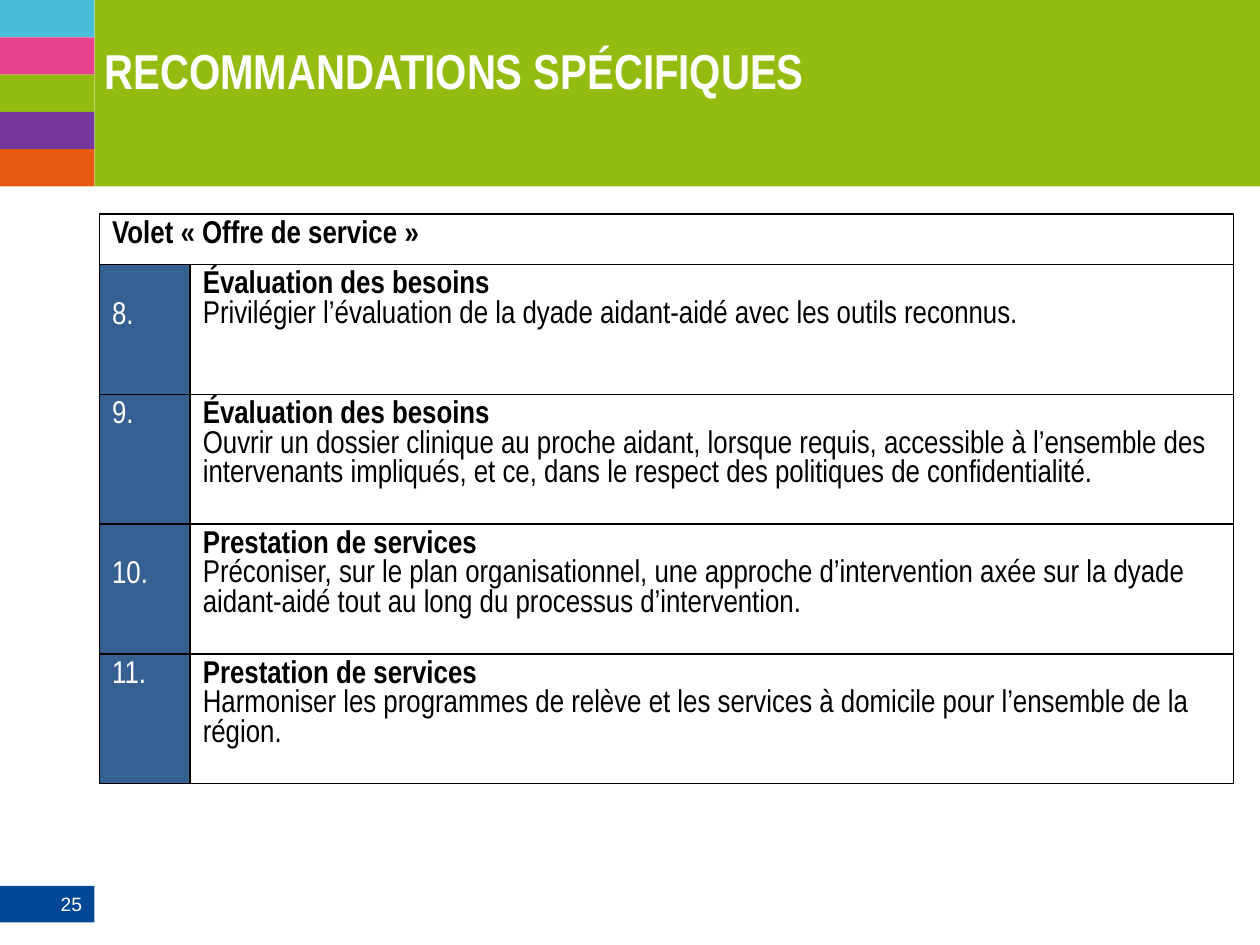
from lxml import etree
from pptx import Presentation
from pptx.dml.color import RGBColor
from pptx.enum import shapes, text
from pptx.oxml import ns
from pptx.util import Inches, Pt

WHITE = RGBColor(0xFF, 0xFF, 0xFF)
BLACK = RGBColor(0, 0, 0)
SKY = RGBColor(0x4A, 0xBD, 0xDB)
PINK = RGBColor(0xE5, 0x42, 0x8C)
GREEN = RGBColor(0x94, 0xBC, 0x10)
PURPLE = RGBColor(0x75, 0x36, 0x9E)
ORANGE = RGBColor(0xE5, 0x5B, 0x12)
NAVY = RGBColor(0, 0x47, 0x96)
STEEL = RGBColor(0x37, 0x60, 0x92)

NEEDS = "Évaluation des besoins"
CARE = "Prestation de services"
ITEMS = [
    ("8.", 0.29, NEEDS,
     "Privilégier l’évaluation de la dyade aidant-aidé avec les outils reconnus."),
    ("9.", 0.05, NEEDS,
     "Ouvrir un dossier clinique au proche aidant, lorsque requis, accessible à "
     "l’ensemble des intervenants impliqués, et ce, dans le respect des politiques "
     "de confidentialité."),
    ("10.", 0.29, CARE,
     "Préconiser, sur le plan organisationnel, une approche d’intervention axée sur "
     "la dyade aidant-aidé tout au long du processus d’intervention."),
    ("11.", 0.05, CARE,
     "Harmoniser les programmes de relève et les services à domicile pour "
     "l’ensemble de la région."),
]


class Deck:
    font = "Arial Narrow"
    size = 18

    def __init__(self, slide):
        self.slide = slide

    def style(self, para, color, bold=False, size=None, font=None):
        for run in para.runs:
            run.font.name = font or self.font
            run.font.size = Pt(size or self.size)
            run.font.bold = bold
            run.font.color.rgb = color

    def rect(self, x, y, w, h, color):
        box = self.slide.shapes.add_shape(
            shapes.MSO_SHAPE.RECTANGLE, Inches(x), Inches(y), Inches(w), Inches(h))
        box.shadow.inherit = False
        box.fill.solid()
        box.fill.fore_color.rgb = color
        box.line.fill.background()
        return box

    def badge(self, x, y, w, h, color, words):
        frame = self.rect(x, y, w, h, color).text_frame
        frame.text = words
        frame.vertical_anchor = text.MSO_ANCHOR.MIDDLE
        para = frame.paragraphs[0]
        para.alignment = text.PP_ALIGN.RIGHT
        self.style(para, WHITE, size=11, font="Arial")

    def title(self, x, y, w, h, words):
        box = self.slide.shapes.add_textbox(Inches(x), Inches(y), Inches(w), Inches(h))
        frame = box.text_frame
        frame.word_wrap = True
        frame.margin_left = frame.margin_right = frame.margin_bottom = 0
        frame.margin_top = Inches(0.11)
        frame.text = words
        self.style(frame.paragraphs[0], WHITE, True, 28)

    def grid(self, x, y, cols, rows):
        frame = self.slide.shapes.add_table(
            len(rows), len(cols), Inches(x), Inches(y),
            Inches(sum(cols)), Inches(sum(rows)))
        table = frame.table
        for col, width in zip(table.columns, cols):
            col.width = Inches(width)
        for row, height in zip(table.rows, rows):
            row.height = Inches(height)
        for cell in table.iter_cells():
            self.border(cell)
            cell.fill.background()
        return table

    def border(self, cell):
        props = cell._tc.get_or_add_tcPr()
        for side in ("lnL", "lnR", "lnT", "lnB"):
            line = etree.SubElement(props, ns.qn("a:" + side), w=str(Pt(1)))
            fill = etree.SubElement(line, ns.qn("a:solidFill"))
            etree.SubElement(fill, ns.qn("a:srgbClr"), val=str(BLACK))

    def cell(self, cell, lines, color, fill=None, top=0.05):
        cell.margin_top = Inches(top)
        if fill is not None:
            cell.fill.solid()
            cell.fill.fore_color.rgb = fill
        cell.text_frame.text = "\n".join(words for words, _ in lines)
        for para, (_, bold) in zip(cell.text_frame.paragraphs, lines):
            self.style(para, color, bold)


def main():
    show = Presentation()
    show.slide_width, show.slide_height = Inches(10), Inches(7.5)
    deck = Deck(show.slides.add_slide(show.slide_layouts[6]))

    side, head = 0.75, 1.48
    deck.rect(side, 0, 10 - side, head, GREEN)
    deck.badge(0, 7.03, side, 0.29, NAVY, "25")
    bands = [SKY, PINK, GREEN, PURPLE, ORANGE]
    step = head / len(bands)
    for i, color in enumerate(bands):
        deck.rect(0, i * step, side, step, color)
    deck.title(0.83, 0.21, 5.83, 0.85, "RECOMMANDATIONS SPÉCIFIQUES")

    table = deck.grid(0.79, 1.7, [0.72, 8.28], [0.37] + [1.03] * len(ITEMS))
    table.cell(0, 0).merge(table.cell(0, 1))
    deck.cell(table.cell(0, 0), [("Volet «\u00a0Offre de service\u00a0»", True)], BLACK)
    for i, (num, top, name, body) in enumerate(ITEMS, 1):
        deck.cell(table.cell(i, 0), [(num, False)], WHITE, STEEL, top)
        deck.cell(table.cell(i, 1), [(name, True), (body, False)], BLACK)

    show.save("out.pptx")


if __name__ == "__main__":
    main()
